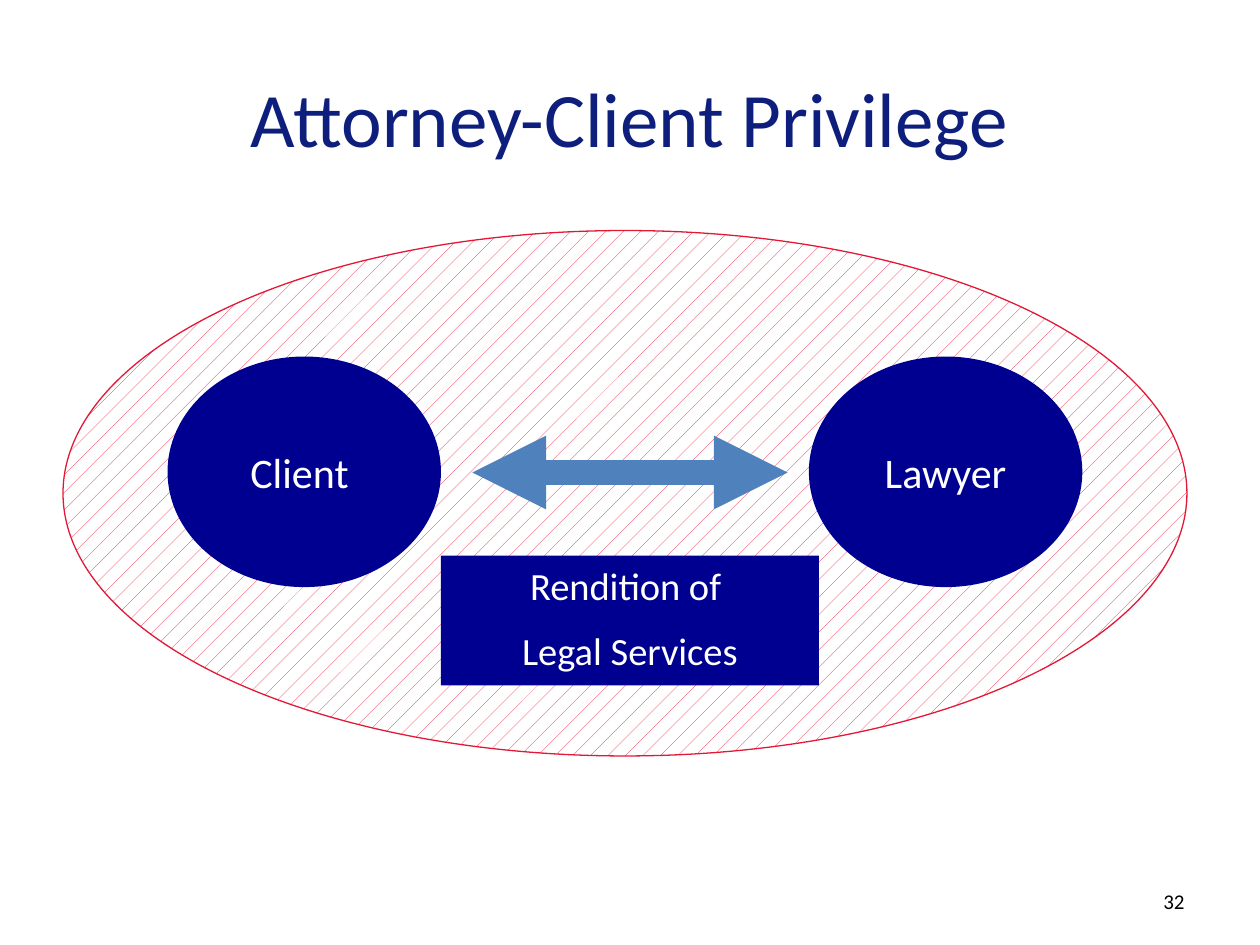
from dataclasses import dataclass

import lxml.etree
import pptx
import pptx.dml.color
import pptx.enum.dml
import pptx.enum.shapes
import pptx.enum.text
import pptx.oxml.ns
import pptx.util

Inches, Pt = pptx.util.Inches, pptx.util.Pt
RGB = pptx.dml.color.RGBColor.from_string
Align = pptx.enum.text.PP_ALIGN
Anchor = pptx.enum.text.MSO_ANCHOR
Shape = pptx.enum.shapes.MSO_SHAPE


@dataclass(frozen=True)
class Theme:
    font: str = "Calibri"
    title: str = "0E1E7D"
    navy: str = "000090"
    red: str = "E31837"
    blue: str = "4F81BD"
    white: str = "FFFFFF"
    black: str = "000000"
    title_size: int = 44
    party_size: int = 24
    service_size: int = 22
    number_size: int = 12


@dataclass(frozen=True)
class Box:
    left: float
    top: float
    width: float
    height: float

    def lengths(self) -> list:
        return [Inches(v) for v in (self.left, self.top, self.width, self.height)]


@dataclass(frozen=True)
class Panel:
    lines: tuple[str, ...]
    outline: Shape
    box: Box
    size: int
    frame_format: dict


THEME = Theme()
PRIVILEGE = Box(0.5, 1.83, 8.92, 4.17)
CENTRED = {"word_wrap": False, "vertical_anchor": Anchor.MIDDLE}
PANELS = (
    Panel(("Client ",), Shape.OVAL, Box(1.33, 2.83, 2.17, 1.83), THEME.party_size, CENTRED),
    Panel(("Lawyer",), Shape.OVAL, Box(6.42, 2.83, 2.17, 1.83), THEME.party_size, CENTRED),
    Panel(("Rendition of ", "Legal Services"), Shape.RECTANGLE, Box(3.5, 4.41, 3, 1.03),
          THEME.service_size, {"word_wrap": True, "vertical_anchor": Anchor.TOP}),
)


def apply(target, values: dict) -> None:
    for name, value in values.items():
        setattr(target, name, value)


def write(frame, lines: tuple[str, ...], size: int, color: str, align, frame_format: dict) -> None:
    """Fill a text frame; later lines are set off by half the type size."""
    apply(frame, frame_format)
    for index, line in enumerate(lines):
        paragraph = frame.add_paragraph() if index else frame.paragraphs[0]
        paragraph.text = line
        apply(paragraph, {"alignment": align, "space_before": Pt(size / 2 if index else 0)})
        apply(paragraph.font, {"name": THEME.font, "size": Pt(size)})
        paragraph.font.color.rgb = RGB(color)


def add_title(slide, text: str) -> None:
    title = slide.shapes.title
    apply(title, dict(zip(("left", "top", "width", "height"), Box(0.5, 0.3, 9, 1.25).lengths())))
    write(title.text_frame, (text,), THEME.title_size, THEME.title, Align.CENTER,
          {"vertical_anchor": Anchor.MIDDLE})
    title.text_frame.paragraphs[0].space_after = Pt(6)


def add_slide_number(slide, number: str) -> None:
    corner = slide.shapes.add_textbox(*Box(7.17, 6.95, 2.33, 0.4).lengths())
    write(corner.text_frame, (number,), THEME.number_size, THEME.black, Align.RIGHT,
          {"word_wrap": True, "vertical_anchor": Anchor.MIDDLE})


def add_privilege(slide, box: Box) -> None:
    privilege = slide.shapes.add_shape(Shape.OVAL, *box.lengths())
    privilege.shadow.inherit = False
    privilege.fill.patterned()
    privilege.fill.pattern = pptx.enum.dml.MSO_PATTERN.PERCENT_5
    privilege.fill.fore_color.rgb = RGB(THEME.red)
    privilege.fill.back_color.rgb = RGB(THEME.white)
    privilege.line.color.rgb = RGB(THEME.red)
    privilege.line.width = Pt(0.75)


def add_panel(slide, panel: Panel) -> None:
    shape = slide.shapes.add_shape(panel.outline, *panel.box.lengths())
    shape.shadow.inherit = False
    shape.fill.solid()
    shape.fill.fore_color.rgb = RGB(THEME.navy)
    shape.line.fill.background()
    write(shape.text_frame, panel.lines, panel.size, THEME.white, Align.CENTER,
          panel.frame_format)


def add_exchange(slide, left: float, right: float, y: float) -> None:
    """Draw the thick two-headed arrow between the parties."""
    exchange = slide.shapes.add_connector(
        pptx.enum.shapes.MSO_CONNECTOR.STRAIGHT, Inches(left), Inches(y), Inches(right), Inches(y))
    exchange.line.color.rgb = RGB(THEME.blue)
    exchange.line.width = Pt(14)
    qn = pptx.oxml.ns.qn
    properties = exchange.element.spPr
    for end in ("a:headEnd", "a:tailEnd"):
        lxml.etree.SubElement(properties.find(qn("a:ln")), qn(end), type="triangle")
    lxml.etree.SubElement(properties, qn("a:effectLst"))


def main() -> None:
    deck = pptx.Presentation()
    apply(deck, {"slide_width": Inches(10), "slide_height": Inches(7.5)})
    slide = deck.slides.add_slide(deck.slide_layouts.get_by_name("Title Only"))
    add_title(slide, "Attorney-Client Privilege")
    add_slide_number(slide, "32")
    add_privilege(slide, PRIVILEGE)
    client, lawyer, services = PANELS
    add_panel(slide, client)
    add_panel(slide, lawyer)
    add_exchange(slide, 3.75, 6.25, 3.75)
    add_panel(slide, services)
    deck.save("out.pptx")


if __name__ == "__main__":
    main()
